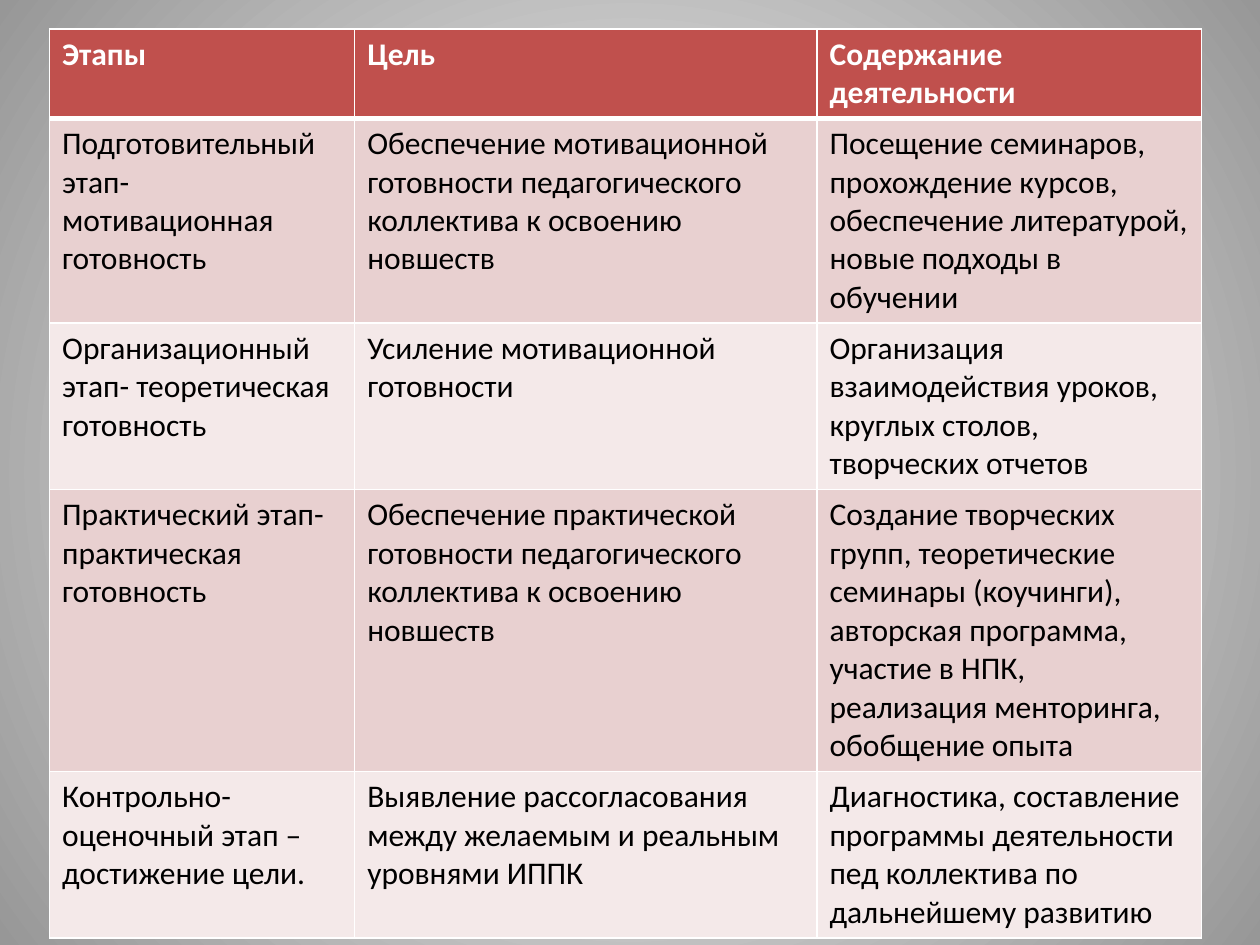
from dataclasses import dataclass

from lxml.etree import SubElement
from pptx import Presentation
from pptx.dml.color import RGBColor
from pptx.oxml.ns import qn
from pptx.util import Cm, Pt


@dataclass(frozen=True)
class Theme:
    font: str = "Calibri"
    size: int = 18
    header: str = "C0504D"
    bands: tuple = ("E8D0D0", "F4E9E9")
    white: str = "FFFFFF"
    black: str = "000000"
    edge: str = "979797"


theme = Theme()

rows = [
    ("Этапы", "Цель", "Содержание деятельности"),
    ("Подготовительный этап- мотивационная готовность",
     "Обеспечение мотивационной готовности педагогического коллектива к освоению новшеств",
     "Посещение семинаров, прохождение курсов, обеспечение литературой, "
     "новые подходы в обучении"),
    ("Организационный этап- теоретическая готовность",
     "Усиление мотивационной готовности",
     "Организация взаимодействия уроков, круглых столов, творческих отчетов"),
    ("Практический этап- практическая готовность",
     "Обеспечение практической готовности педагогического коллектива к освоению новшеств",
     "Создание творческих групп, теоретические семинары (коучинги), авторская программа, "
     "участие в НПК, реализация менторинга, обобщение опыта"),
    ("Контрольно-оценочный этап – достижение цели.",
     "Выявление рассогласования между желаемым и реальным уровнями ИППК",
     "Диагностика, составление программы деятельности пед коллектива "
     "по дальнейшему развитию"),
]
col_widths = [6.15, 9.32, 7.75]


def set_border(cell, side, width):
    ln = SubElement(cell._tc.get_or_add_tcPr(), qn(f"a:ln{side}"), w=str(Pt(width)))
    fill = SubElement(ln, qn("a:solidFill"))
    SubElement(fill, qn("a:srgbClr"), val=theme.white)


prs = Presentation()
prs.slide_width, prs.slide_height = Cm(25.4), Cm(19.05)
s = prs.slides.add_slide(prs.slide_layouts[6])

# Background: circular gradient from the centre
bg = s.background.fill
bg.gradient()
for stop, color, pos in zip(bg.gradient_stops, (theme.white, theme.edge), (0, 1)):
    stop.color.rgb = RGBColor.from_string(color)
    stop.position = pos
grad = s.element.find(".//" + qn("a:gradFill"))
grad.remove(grad.find(qn("a:lin")))
circle = SubElement(grad, qn("a:path"), path="circle")
SubElement(circle, qn("a:fillToRect"), l="50000", t="50000", r="50000", b="50000")

# Table of stages; rows grow with their text
frame = s.shapes.add_table(len(rows), len(col_widths), Cm(1), Cm(0.58),
                           Cm(sum(col_widths)), Cm(18.03))
table = frame.table
for col, width in zip(table.columns, col_widths):
    col.width = Cm(width)
for row in table.rows:
    row.height = Cm(1.3)
frame.height = Cm(18.03)

# Cells: borders, fill and text
for i, texts in enumerate(rows):
    is_header = i == 0
    fill = theme.header if is_header else theme.bands[(i - 1) % 2]
    for j, text in enumerate(texts):
        cell = table.cell(i, j)
        for side in "LRTB":
            thick = (is_header and side == "B") or (i == 1 and side == "T")
            set_border(cell, side, 3 if thick else 1)
        cell.fill.solid()
        cell.fill.fore_color.rgb = RGBColor.from_string(fill)
        cell.text_frame.text = text
        font = cell.text_frame.paragraphs[0].runs[0].font
        font.name, font.size, font.bold = theme.font, Pt(theme.size), is_header
        font.color.rgb = RGBColor.from_string(theme.white if is_header else theme.black)

prs.save("out.pptx")
